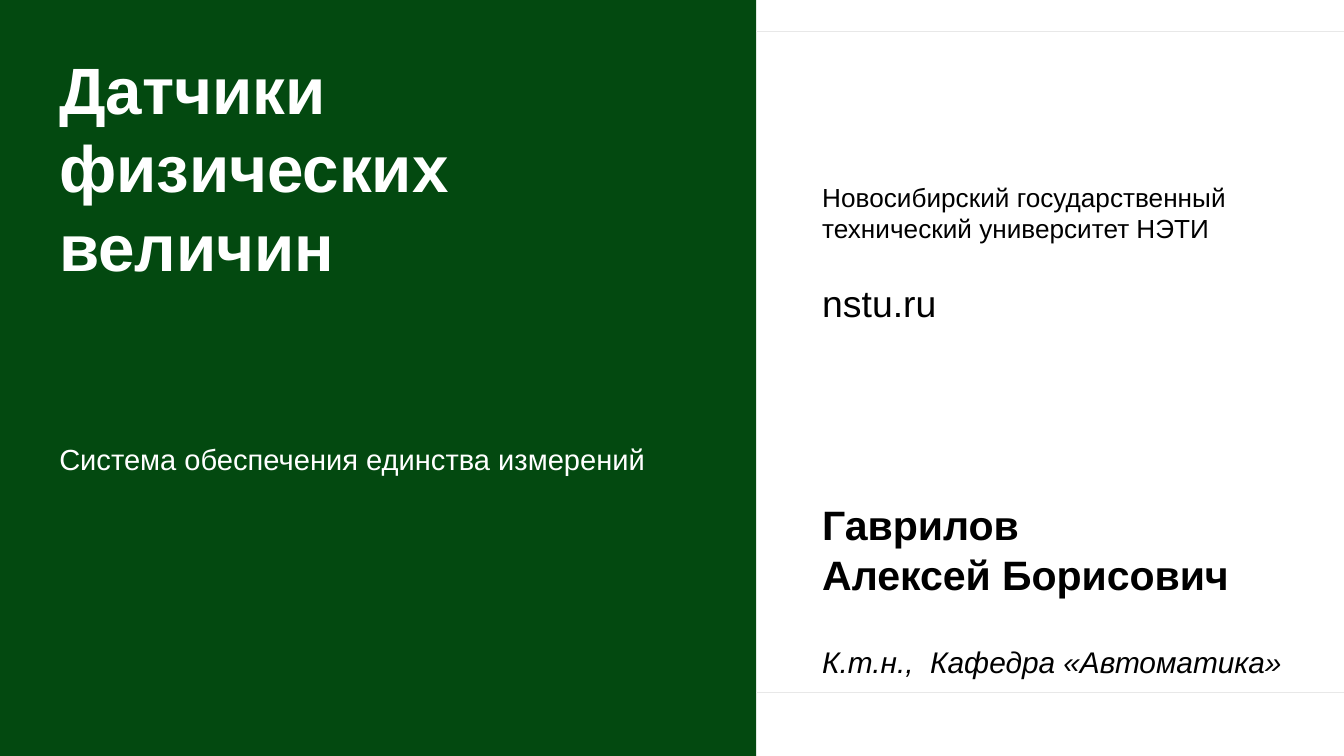
"""Build the title slide of a lecture on sensors of physical quantities."""
from pptx import Presentation
from pptx import util as u
from pptx.dml.color import RGBColor
from pptx.enum import shapes, text
from pptx.oxml import parse_xml
from pptx.oxml.ns import nsdecls

GREEN, WHITE, BLACK, GREY = "034910", "FFFFFF", "000000", "E8E8E8"
WIDTH, HEIGHT, PANEL = 25.4, 14.29, 14.29
TOP_EDGE, BOTTOM_EDGE = 0.59, 13.09


def rgb(value):
    return RGBColor.from_string(value)


def write(sp, box, lines, color, left_inset=0.25):
    sp.left, sp.top, sp.width, sp.height = [u.Cm(v) for v in box]
    tf = sp.text_frame
    tf.word_wrap = True
    tf.auto_size = text.MSO_AUTO_SIZE.NONE
    tf.vertical_anchor = text.MSO_ANCHOR.TOP
    tf.margin_left, tf.margin_right = u.Cm(left_inset), u.Cm(0.25)
    tf.margin_top = tf.margin_bottom = u.Cm(0.13)
    for i, (words, size, bold, italic, before) in enumerate(lines):
        p = tf.paragraphs[0] if i == 0 else tf.add_paragraph()
        p.text = words
        p.alignment = text.PP_ALIGN.LEFT
        p.line_spacing = 1.0
        p.space_before = u.Pt(before)
        p.font.name, p.font.size = "Arial", u.Pt(size)
        p.font.bold, p.font.italic = bold, italic
        p.font.color.rgb = rgb(color)


prs = Presentation()
prs.slide_width, prs.slide_height = u.Cm(WIDTH), u.Cm(HEIGHT)
s = prs.slides.add_slide(prs.slide_layouts[0])
title, subtitle = s.placeholders

blocks = [
    (PANEL, 0, WIDTH - PANEL, TOP_EDGE, WHITE),
    (PANEL, BOTTOM_EDGE, WIDTH - PANEL, HEIGHT - BOTTOM_EDGE, WHITE),
    (0, 0, PANEL, HEIGHT, GREEN),
]
for i, (*box, color) in enumerate(blocks):
    block = s.shapes.add_shape(shapes.MSO_SHAPE.RECTANGLE, *[u.Cm(v) for v in box])
    block.shadow.inherit = False
    block.fill.solid()
    block.fill.fore_color.rgb = rgb(color)
    block.line.fill.background()
    s.shapes._spTree.insert(2 + i, block._element)

for y in (TOP_EDGE, BOTTOM_EDGE):
    rule = s.shapes.add_connector(
        shapes.MSO_CONNECTOR.STRAIGHT, u.Cm(PANEL), u.Cm(y), u.Cm(WIDTH), u.Cm(y))
    rule.line.color.rgb = rgb(GREY)
    rule.line.width = u.Pt(0.5)
    rule._element.spPr.append(parse_xml(f"<a:effectLst {nsdecls('a')}/>"))

write(title, (1.12, 0.79, 12.78, 5.2),
      [("Датчики физических величин", 35.1, True, False, 0)], WHITE, 0)
write(subtitle, (1.12, 8.21, 12.78, 1.2),
      [("Система обеспечения единства измерений", 15.6, False, False, 0)], WHITE, 0)

right_texts = [
    ((15.29, 9.32, 9.32, 3.68), [
        ("Гаврилов", 22, True, False, 0),
        ("Алексей Борисович", 22, True, False, 0),
        ("К.т.н.,  Кафедра «Автоматика»", 16, False, True, 24)]),
    ((15.29, 5.16, 3.18, 1.19), [("nstu.ru", 20, False, False, 0)]),
    ((15.29, 3.3, 9.07, 2.06), [
        ("Новосибирский государственный", 14, False, False, 0),
        ("технический университет НЭТИ", 14, False, False, 0)]),
]
for box, lines in right_texts:
    write(s.shapes.add_textbox(0, 0, 0, 0), box, lines, BLACK)

prs.save("out.pptx")
